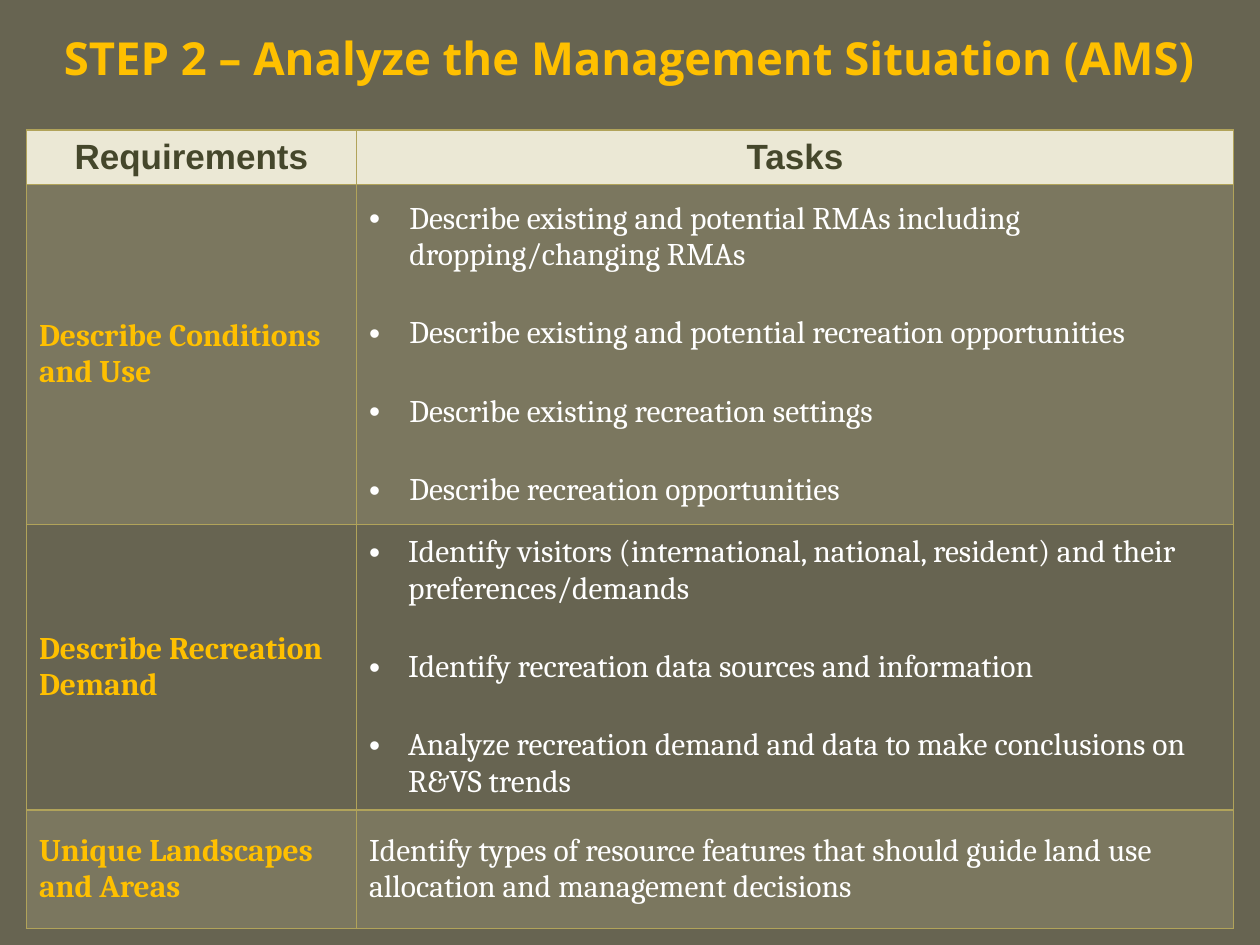
from lxml.etree import SubElement
from pptx import Presentation
from pptx.dml.color import RGBColor
from pptx.enum.text import MSO_ANCHOR, PP_ALIGN
from pptx.oxml import parse_xml
from pptx.oxml.ns import nsdecls, qn
from pptx.util import Inches, Pt

COLORS = {
    "background": "676451",
    "gold": "FFC000",
    "white": "FFFFFF",
    "olive": "45472B",
    "cream": "EBE8D5",
    "band": "CEC597",
    "border": "B1A35A",
}
HEADINGS = ["Requirements", "Tasks"]
STEPS = [
    ("Describe Conditions and Use", 0.32, [
        "Describe existing and potential RMAs including dropping/changing RMAs",
        "Describe existing and potential recreation opportunities",
        "Describe existing recreation settings",
        "Describe recreation opportunities",
    ]),
    ("Describe Recreation Demand", 0.31, [
        "Identify visitors (international, national, resident) and their preferences/demands",
        "Identify recreation data sources and information",
        "Analyze recreation demand and data to make conclusions on R&VS trends",
    ]),
    ("Unique Landscapes and Areas", 0, [
        "Identify types of resource features that should guide land use allocation and management decisions",
    ]),
]
COLUMN_WIDTHS = [2.62, 6.96]
ROW_HEIGHTS = [0.41, 2.7, 2.2, 0.94]


def write(frame, lines, font, size, color, bold=False, align=PP_ALIGN.LEFT, indent=0):
    frame.text = "\n".join(lines)
    for position, paragraph in enumerate(frame.paragraphs):
        paragraph.alignment = align
        if position:
            paragraph.space_before = Pt(12)
        if position < len(lines) - 1:
            paragraph.space_after = Pt(12)
        if indent:
            properties = paragraph._p.get_or_add_pPr()
            properties.set("marL", str(Inches(indent)))
            properties.set("indent", str(-Inches(indent)))
            SubElement(properties, qn("a:buFont"), typeface="Arial")
            SubElement(properties, qn("a:buChar"), char="•")
        for run in paragraph.runs:
            run.font.name = font
            run.font.size = Pt(size)
            run.font.bold = bold
            run.font.color.rgb = RGBColor.from_string(COLORS[color])


def paint(cell, color=None, alpha=None):
    cell.vertical_anchor = MSO_ANCHOR.MIDDLE
    if color:
        cell.fill.solid()
        cell.fill.fore_color.rgb = RGBColor.from_string(COLORS[color])
    else:
        cell.fill.background()
    properties = cell._tc.get_or_add_tcPr()
    if alpha:
        shade = properties.find(".//" + qn("a:srgbClr"))
        SubElement(shade, qn("a:alpha"), val=str(alpha * 1000))
    for order, side in enumerate("LRTB"):
        properties.insert(order, parse_xml(
            f'<a:ln{side} {nsdecls("a")} w="{Pt(1)}"><a:solidFill>'
            f'<a:srgbClr val="{COLORS["border"]}"/></a:solidFill></a:ln{side}>'
        ))


prs = Presentation()
prs.slide_width, prs.slide_height = Inches(10), Inches(7.5)
slide = prs.slides.add_slide(prs.slide_layouts[6])
slide.background.fill.solid()
slide.background.fill.fore_color.rgb = RGBColor.from_string(COLORS["background"])

title = slide.shapes.add_textbox(0, Inches(0.08), prs.slide_width, prs.slide_height // 10).text_frame
title.word_wrap = True
title.vertical_anchor = MSO_ANCHOR.MIDDLE
write(title, ["STEP 2 – Analyze the Management Situation (AMS)"],
      "Open Sans", 26, "gold", True, PP_ALIGN.CENTER)

plan = slide.shapes.add_table(
    len(ROW_HEIGHTS), len(COLUMN_WIDTHS), Inches(0.21), Inches(1.03),
    Inches(sum(COLUMN_WIDTHS)), Inches(sum(ROW_HEIGHTS)),
).table
for column, width in zip(plan.columns, COLUMN_WIDTHS):
    column.width = Inches(width)
for row, height in zip(plan.rows, ROW_HEIGHTS):
    row.height = Inches(height)

for column, heading in enumerate(HEADINGS):
    cell = plan.cell(0, column)
    write(cell.text_frame, [heading], "Arial", 20, "olive", True, PP_ALIGN.CENTER)
    paint(cell, "cream")

for row, (requirement, indent, tasks) in enumerate(STEPS, start=1):
    requirement_cell, tasks_cell = plan.cell(row, 0), plan.cell(row, 1)
    write(requirement_cell.text_frame, [requirement], "Cambria", 18, "gold", True)
    write(tasks_cell.text_frame, tasks, "Cambria", 18, "white", indent=indent)
    for cell in (requirement_cell, tasks_cell):
        if row % 2:
            paint(cell, "band", 20)
        else:
            paint(cell)

prs.save("out.pptx")
